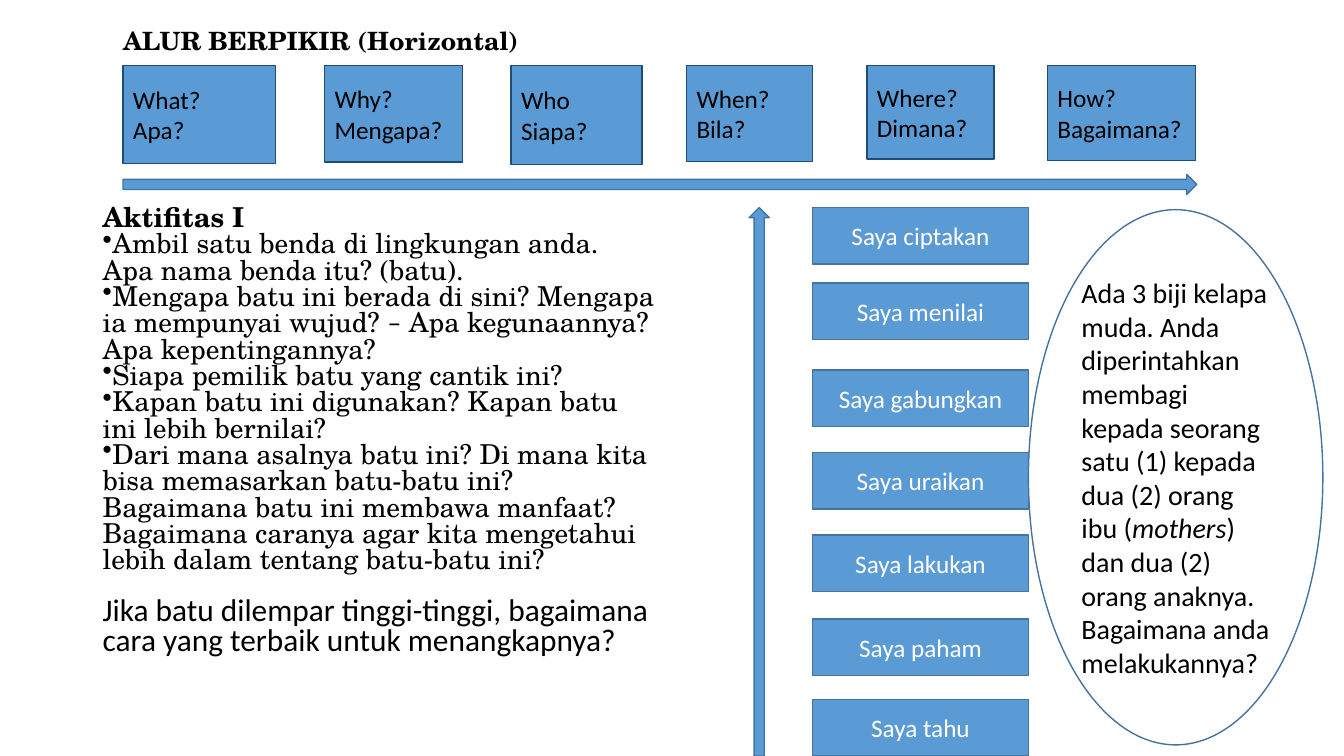
from dataclasses import dataclass
from lxml.etree import SubElement
from pptx import Presentation
from pptx.dml.color import RGBColor as RGB
from pptx.enum.shapes import MSO_SHAPE as Kind
from pptx.enum.text import MSO_ANCHOR as Anchor, PP_ALIGN as Align
from pptx.oxml.ns import qn
from pptx.util import Inches, Pt


@dataclass(frozen=True)
class Theme:
    blue: str = "5B9BD5"
    navy: str = "1F4D78"
    edge: str = "43739E"
    black: str = "000000"
    white: str = "FFFFFF"
    sans: str = "Calibri"
    serif: str = "TeX Gyre Schola"
    label: float = 18
    story: float = 20
    task: float = 19.6
    quiz: float = 22.4


theme = Theme()


def add_shape(kind, box, fill, edge):
    shape = slide.shapes.add_shape(kind, *map(Inches, box))
    shape.shadow.inherit = False
    shape.fill.solid()
    shape.fill.fore_color.rgb = RGB.from_string(fill)
    shape.line.color.rgb = RGB.from_string(edge)
    shape.line.width = Pt(1)
    frame = shape.text_frame
    frame.word_wrap = True
    frame.vertical_anchor = Anchor.MIDDLE
    frame.paragraphs[0].alignment = Align.LEFT
    return frame


def add_run(para, text, size, font=theme.sans, color=theme.black, bold=False, italic=False):
    run = para.add_run()
    run.text = text
    run.font.size = Pt(size)
    run.font.name = font
    run.font.bold = bold
    run.font.italic = italic
    run.font.color.rgb = RGB.from_string(color)


deck = Presentation()
deck.slide_width, deck.slide_height = Inches(13.33), Inches(7.5)
slide = deck.slides.add_slide(deck.slide_layouts[6])

# Activity text
body = slide.shapes.add_textbox(*map(Inches, (0.92, 2, 5.67, 4.76))).text_frame
body.word_wrap = True
tasks = [
    (False, ["Aktifitas I"]),
    (True, ["Ambil satu benda di lingkungan anda. Apa nama benda itu? (batu)."]),
    (True, ["Mengapa batu ini berada di sini? Mengapa ia mempunyai wujud? ", "–",
            " Apa kegunaannya? Apa kepentingannya?"]),
    (True, ["Siapa pemilik batu yang cantik ini?"]),
    (True, ["Kapan batu ini digunakan? Kapan batu ini lebih bernilai?"]),
    (True, ["Dari mana asalnya batu ini? Di mana kita bisa memasarkan batu-batu ini?"]),
    (False, ["Bagaimana batu ini membawa manfaat? Bagaimana caranya agar kita "
             "mengetahui lebih dalam tentang batu-batu ini?"]),
]
for i, (dot, parts) in enumerate(tasks):
    para = body.add_paragraph() if i else body.paragraphs[0]
    para.line_spacing = 0.8
    if dot:
        SubElement(para._p.get_or_add_pPr(), qn("a:buChar")).set("char", "•")
    for part in parts:
        font = theme.sans if part == "–" else theme.serif
        add_run(para, part, theme.task, font, bold=i == 0)

# Closing question
para = body.add_paragraph()
para.line_spacing = 0.8
para.space_before = Pt(16.4)
add_run(para, "Jika batu dilempar tinggi-tinggi, bagaimana cara yang terbaik untuk "
        "menangkapnya?", theme.quiz)

# Question boxes and the arrow below them
asks = [
    (1.22, 1.51, 0.97, "What?", "Apa?"),
    (3.22, 1.37, 0.96, "Why?", "Mengapa?"),
    (5.07, 1.3, 0.98, "Who", "Siapa?"),
    (6.81, 1.25, 0.95, "When?", "Bila?"),
    (8.6, 1.26, 0.93, "Where?", "Dimana?"),
    (10.39, 1.47, 0.94, "How?", "Bagaimana?"),
]
for left, width, height, ask, local in asks:
    frame = add_shape(Kind.RECTANGLE, (left, 0.65, width, height), theme.blue, theme.navy)
    add_run(frame.paragraphs[0], ask, theme.label)
    para = frame.add_paragraph()
    para.alignment = Align.LEFT
    add_run(para, local, theme.label)
add_shape(Kind.RIGHT_ARROW, (1.22, 1.73, 10.65, 0.2), theme.blue, theme.edge)

# Title
title = slide.shapes.add_textbox(*map(Inches, (0.62, 0.2, 4.79, 0.4))).text_frame
title.word_wrap = True
title.margin_left = Inches(0.6)
title.vertical_anchor = Anchor.MIDDLE
add_run(title.paragraphs[0], "ALUR BERPIKIR (Horizontal)", theme.label, theme.serif, bold=True)

# Ladder of thinking levels and its arrow
levels = [
    (2.06, "Saya ciptakan"),
    (2.81, "Saya menilai"),
    (3.67, "Saya gabungkan"),
    (4.49, "Saya uraikan"),
    (5.31, "Saya lakukan"),
    (6.14, "Saya paham"),
    (6.94, "Saya tahu"),
]
for top, level in levels:
    frame = add_shape(Kind.RECTANGLE, (8.06, top, 2.14, 0.56), theme.blue, theme.edge)
    frame.paragraphs[0].alignment = Align.CENTER
    add_run(frame.paragraphs[0], level, theme.label, color=theme.white)
add_shape(Kind.UP_ARROW, (7.43, 2.06, 0.2, 5.44), theme.blue, theme.edge)

# Story in the oval
oval = add_shape(Kind.OVAL, (10.2, 2.08, 2.92, 5.31), theme.white, theme.edge)
story = oval.paragraphs[0]
add_run(story, "Ada 3 biji kelapa muda. Anda diperintahkan membagi kepada seorang "
        "satu (1) kepada dua (2) orang ibu (", theme.story)
add_run(story, "mothers", theme.story, italic=True)
add_run(story, ") dan dua (2) orang anaknya. Bagaimana anda melakukannya?", theme.story)

deck.save("out.pptx")
